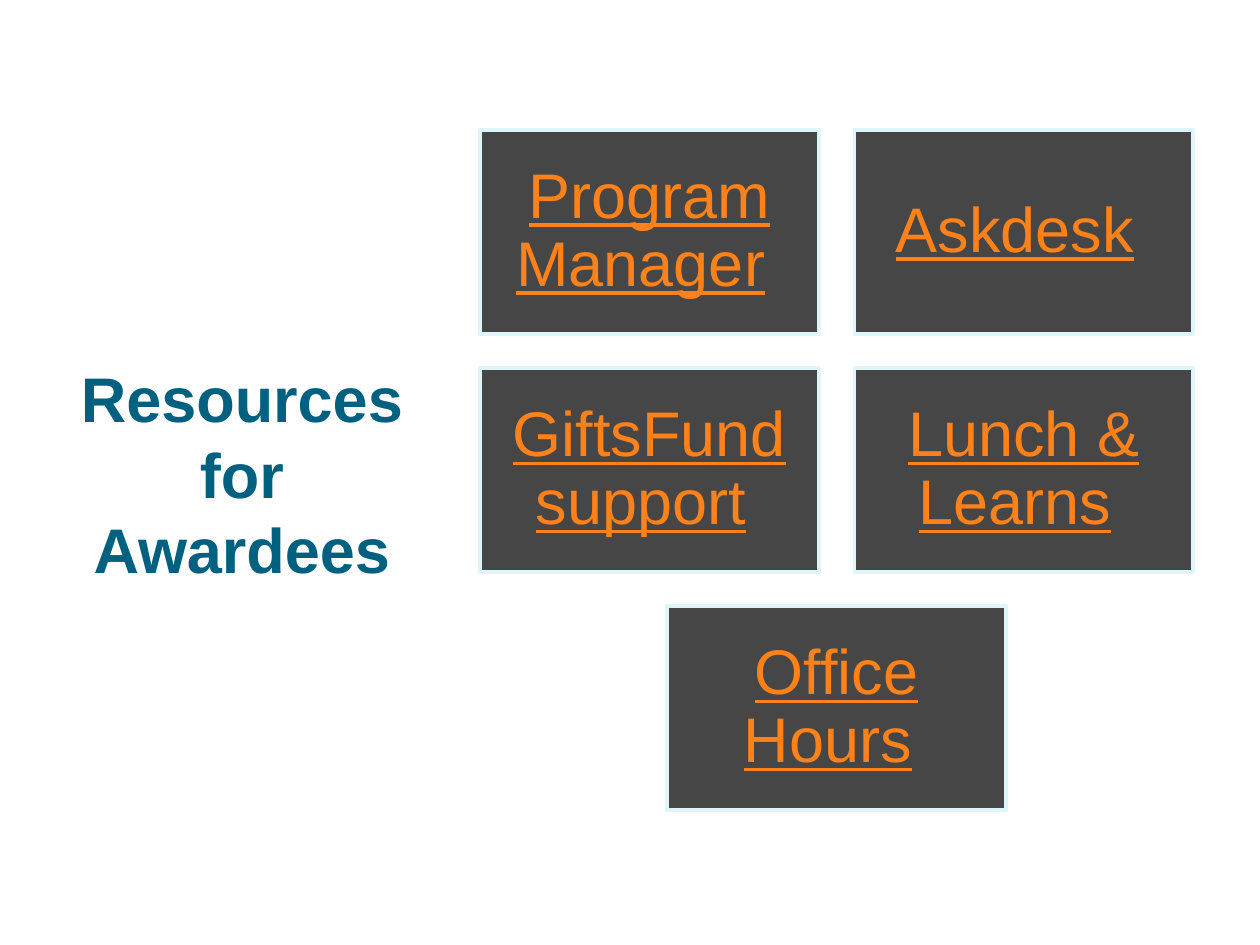
from dataclasses import dataclass

from pptx import Presentation
from pptx import util as u
from pptx.dml.color import RGBColor
from pptx.enum import shapes, text


@dataclass(frozen=True)
class Theme:
    font: str = "Arial"
    size: int = 36
    title: str = "00607F"
    card: str = "464646"
    border: str = "DEF5FA"
    link: str = "FF8119"
    plain: str = "FFFFFF"


THEME = Theme()

# Card grid
CARD_WIDTH, CARD_HEIGHT, GAP = 2.69, 1.62, 0.28
GRID_CENTER, GRID_TOP = 6.64, 1.03
CARD_ROWS = [
    ["Program Manager", "Askdesk"],
    ["GiftsFund support", "Lunch & Learns"],
    ["Office Hours"],
]
TRAILING_SPACE = " "  # no-break space after each label


def add_span(para, words, color, bold=False, underline=False):
    span = para.add_run()
    span.text = words
    span.font.name = THEME.font
    span.font.size = u.Pt(THEME.size)
    span.font.bold = bold
    span.font.underline = underline
    span.font.color.rgb = RGBColor.from_string(color)


def centered_paragraph(frame):
    frame.word_wrap = True
    frame.vertical_anchor = text.MSO_ANCHOR.MIDDLE
    para = frame.paragraphs[0]
    para.alignment = text.PP_ALIGN.CENTER
    return para


def add_title(page, words):
    box = page.shapes.add_textbox(
        u.Inches(0.52), u.Inches(0.7), u.Inches(2.8), u.Inches(6.11))
    add_span(centered_paragraph(box.text_frame), words, THEME.title, bold=True)


def add_card(page, left, top, label):
    card = page.shapes.add_shape(
        shapes.MSO_SHAPE.RECTANGLE, u.Inches(left), u.Inches(top),
        u.Inches(CARD_WIDTH), u.Inches(CARD_HEIGHT))
    card.shadow.inherit = False
    card.fill.solid()
    card.fill.fore_color.rgb = RGBColor.from_string(THEME.card)
    card.line.color.rgb = RGBColor.from_string(THEME.border)
    card.line.width = u.Pt(2)

    frame = card.text_frame
    frame.margin_left = frame.margin_right = u.Inches(0.15)
    frame.margin_top = frame.margin_bottom = u.Inches(0.15)
    para = centered_paragraph(frame)
    para.line_spacing = 0.9
    add_span(para, label, THEME.link, underline=True)
    add_span(para, TRAILING_SPACE, THEME.plain)


def add_card_grid(page):
    for row, labels in enumerate(CARD_ROWS):
        # Each row is centred, so the single last card sits in the middle
        row_width = len(labels) * (CARD_WIDTH + GAP) - GAP
        left = GRID_CENTER - row_width / 2
        top = GRID_TOP + row * (CARD_HEIGHT + GAP - 0.01)
        for column, label in enumerate(labels):
            add_card(page, left + column * (CARD_WIDTH + GAP), top, label)


def main():
    deck = Presentation()
    deck.slide_width, deck.slide_height = u.Inches(10), u.Inches(7.5)
    page = deck.slides.add_slide(deck.slide_layouts[6])
    add_title(page, "Resources for Awardees")
    add_card_grid(page)
    deck.save("out.pptx")


if __name__ == "__main__":
    main()
